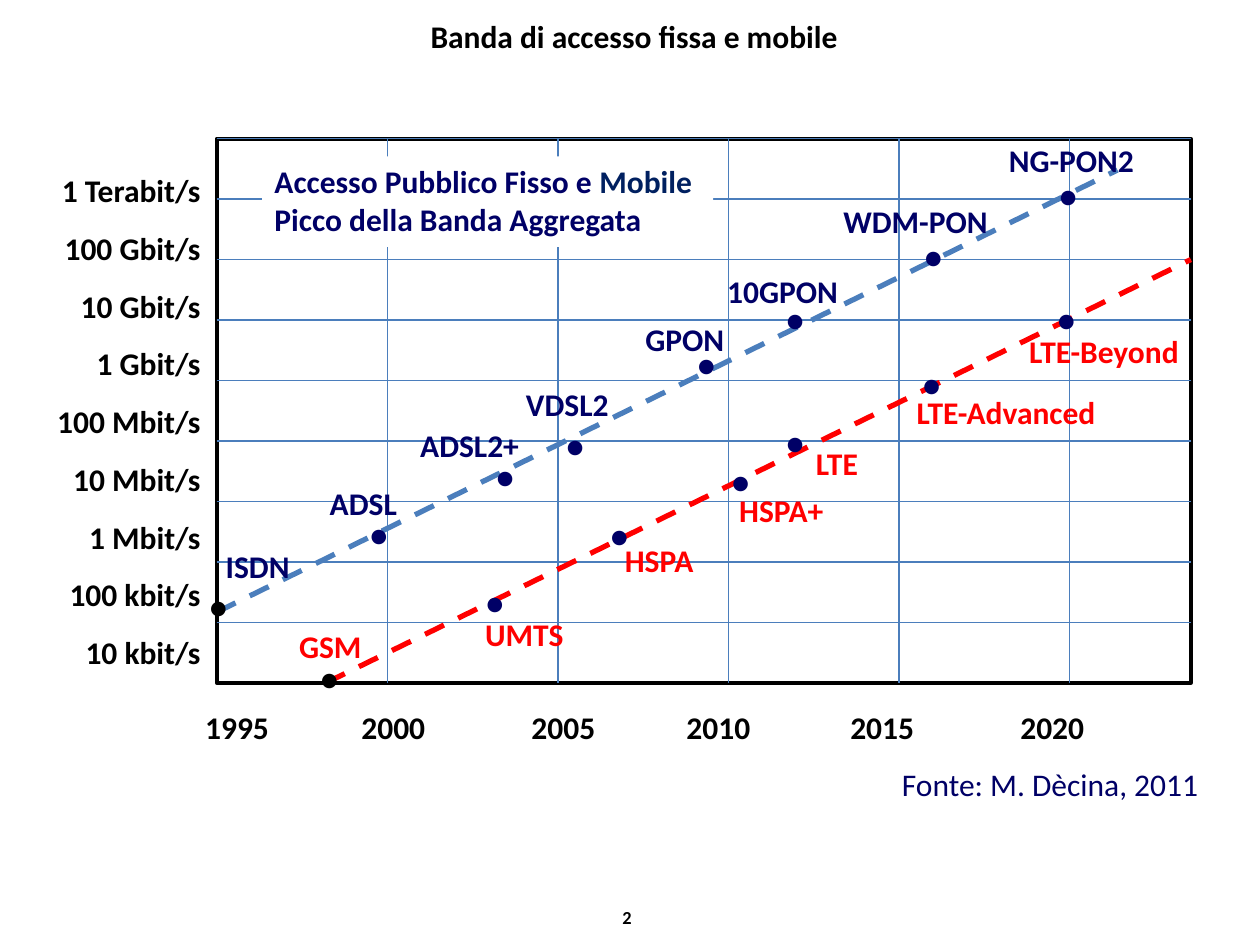
from dataclasses import dataclass

from lxml import etree
from pptx import Presentation
from pptx import util as u
from pptx.dml.color import RGBColor
from pptx.enum import dml, shapes, text
from pptx.oxml.ns import qn


@dataclass(frozen=True)
class Theme:
    font: str = "Calibri"
    body: float = 18
    small: float = 10.5
    black: str = "000000"
    white: str = "FFFFFF"
    navy: str = "000066"
    dark_blue: str = "002060"
    blue: str = "4B7EBC"
    red: str = "FF0000"


T = Theme()
LEFT, TOP = 1.72, 1.1
COL, ROW = 1.354, 0.48
COLS, ROWS = 5.71, 9
LINE_H = 0.41
DOT_W = 0.4

# name, label (column, row, width in columns), dot centre (column, row)
FIXED = [
    ("ISDN", (-0.02, 6.65, 0.53), (0.03, 7.74)),
    ("ADSL", (0.59, 5.6, 0.55), (0.97, 6.55)),
    ("ADSL2+", (1.12, 4.65, 0.75), (1.71, 5.59)),
    ("VDSL2", (1.74, 3.98, 0.65), (2.12, 5.07)),
    ("GPON", (2.44, 2.9, 0.62), (2.89, 3.74)),
    ("10GPON", (2.92, 2.1, 0.81), (3.41, 2.99)),
    ("WDM-PON", (3.6, 0.94, 1.02), (4.22, 1.95)),
    ("NG-PON2", (4.57, -0.06, 0.9), (5.01, 0.95)),
]
MOBILE = [
    ("GSM", (0.41, 7.98, 0.52), (0.68, 8.93)),
    ("UMTS", (1.5, 7.77, 0.62), (1.65, 7.68)),
    ("HSPA", (2.32, 6.55, 0.56), (2.38, 6.57)),
    ("HSPA+", (2.99, 5.73, 0.66), (3.09, 5.68)),
    ("LTE", (3.44, 4.94, 0.4), (3.41, 5.03)),
    ("LTE-Advanced", (4.03, 4.1, 1.23), (4.21, 4.07)),
    ("LTE-Beyond", (4.69, 3.1, 1.05), (5.0, 2.99)),
]
SPEEDS = ["1 Terabit/s", "100 Gbit/s", "10 Gbit/s", "1 Gbit/s", "100 Mbit/s",
          "10 Mbit/s", "1 Mbit/s", "100 kbit/s", "10 kbit/s"]
YEARS = ["1995", "2000", "2005", "2010", "2015", "2020"]
YEAR_TABS = [1.24, 2.59, 3.82, 5.12, 6.47]


def rgb(value):
    return RGBColor.from_string(value)


def grid(col, row):
    """Slide position, in inches, of a point on the plot grid."""
    return LEFT + col * COL, TOP + row * ROW


def add_rect(slide, box, fill=None, line=None, width=0):
    sp = slide.shapes.add_shape(shapes.MSO_SHAPE.RECTANGLE, *map(u.Inches, box))
    sp.shadow.inherit = False
    if fill:
        sp.fill.solid()
        sp.fill.fore_color.rgb = rgb(fill)
    else:
        sp.fill.background()
    if line:
        sp.line.color.rgb = rgb(line)
        sp.line.width = u.Pt(width)
    else:
        sp.line.fill.background()
    return sp


def add_line(slide, start, end, color=T.blue, width=0.75, dashed=False):
    """Straight line between two (column, row) points."""
    ends = [u.Inches(v) for v in (*grid(*start), *grid(*end))]
    ln = slide.shapes.add_connector(shapes.MSO_CONNECTOR.STRAIGHT, *ends)
    ln.line.color.rgb = rgb(color)
    ln.line.width = u.Pt(width)
    if dashed:
        ln.line.dash_style = dml.MSO_LINE.DASH
    etree.SubElement(ln._element.spPr, qn("a:effectLst"))


def set_tabs(p, stops):
    tabs = etree.SubElement(p._p.get_or_add_pPr(), qn("a:tabLst"))
    for stop in stops:
        etree.SubElement(tabs, qn("a:tab"), pos=str(u.Inches(stop)), algn="l")


def write(sp, paragraphs, size=T.body, color=T.black, bold=True, align="LEFT",
          anchor="TOP", wrap=False, leading=None, before=None, tabs=()):
    """Fill a shape; each paragraph is a string or a list of (text, colour)."""
    tf = sp.text_frame
    tf.word_wrap = wrap
    tf.vertical_anchor = getattr(text.MSO_ANCHOR, anchor)
    for i, content in enumerate(paragraphs):
        p = tf.add_paragraph() if i else tf.paragraphs[0]
        p.alignment = getattr(text.PP_ALIGN, align)
        if leading:
            p.line_spacing = u.Pt(leading)
        if before and i:
            p.space_before = u.Pt(before)
        if tabs:
            set_tabs(p, tabs)
        runs = [(content, color)] if isinstance(content, str) else content
        for words, run_color in runs:
            r = p.add_run()
            r.text = words
            r.font.name = T.font
            r.font.size = u.Pt(size)
            r.font.bold = bold
            r.font.color.rgb = rgb(run_color)


def add_text(slide, box, *paragraphs, **style):
    sp = slide.shapes.add_textbox(*map(u.Inches, box))
    write(sp, paragraphs, **style)
    return sp


def add_plot(slide):
    add_rect(slide, (LEFT, TOP, COLS * COL, ROWS * ROW), line=T.black, width=2.25)
    for row in range(ROWS):
        add_line(slide, (0, row), (COLS, row))
    for col in range(1, len(YEARS)):
        add_line(slide, (col, 0), (col, ROWS))


def add_axis_labels(slide):
    add_text(slide, (1.53, 5.57, 7.47, LINE_H), "\t".join(YEARS),
             wrap=True, tabs=YEAR_TABS)
    add_text(slide, (0.32, 1.38, 1.37, 4.23), *SPEEDS, align="RIGHT",
             leading=16.5, before=16.5)


def add_series(slide, items, start, end, line_color, label_color):
    """Dashed trend line with a dot and a label for each technology."""
    add_line(slide, start, end, line_color, 3, dashed=True)
    for i, (name, (col, row, width), dot) in enumerate(items):
        x, y = grid(*dot)
        add_text(slide, (x - DOT_W / 2, y - LINE_H / 2, DOT_W, LINE_H), "●",
                 color=T.navy if i else T.black, bold=False)
        add_text(slide, (*grid(col, row), width * COL, LINE_H), name,
                 color=label_color)


def main():
    prs = Presentation()
    prs.slide_width, prs.slide_height = u.Inches(10), u.Inches(7.5)
    slide = prs.slides.add_slide(prs.slide_layouts[6])

    title = add_text(slide, (0.26, 0.05, 9.45, 0.47), "Banda di accesso fissa e mobile",
                     align="CENTER", anchor="MIDDLE", wrap=True)
    tf = title.text_frame
    tf.margin_right = tf.margin_top = tf.margin_bottom = 0
    add_text(slide, (4.84, 7.14, 0.28, 0.28), "2", size=T.small)

    add_plot(slide)
    add_series(slide, MOBILE, (0.64, ROWS), (COLS, 2), T.red, T.red)
    add_series(slide, FIXED, (0, 7.83), (5.28, 0.52), T.blue, T.navy)
    caption = add_rect(slide, (2.08, 1.24, 3.58, 0.72), fill=T.white)
    write(caption, [[("Accesso Pubblico Fisso e ", T.navy), ("Mobile", T.dark_blue)],
                    "Picco della Banda Aggregata"], color=T.navy)
    add_axis_labels(slide)
    add_text(slide, (7.06, 6.02, 2.64, LINE_H), "Fonte: M. Dècina, 2011",
             color=T.navy, bold=False)
    prs.save("out.pptx")


if __name__ == "__main__":
    main()
